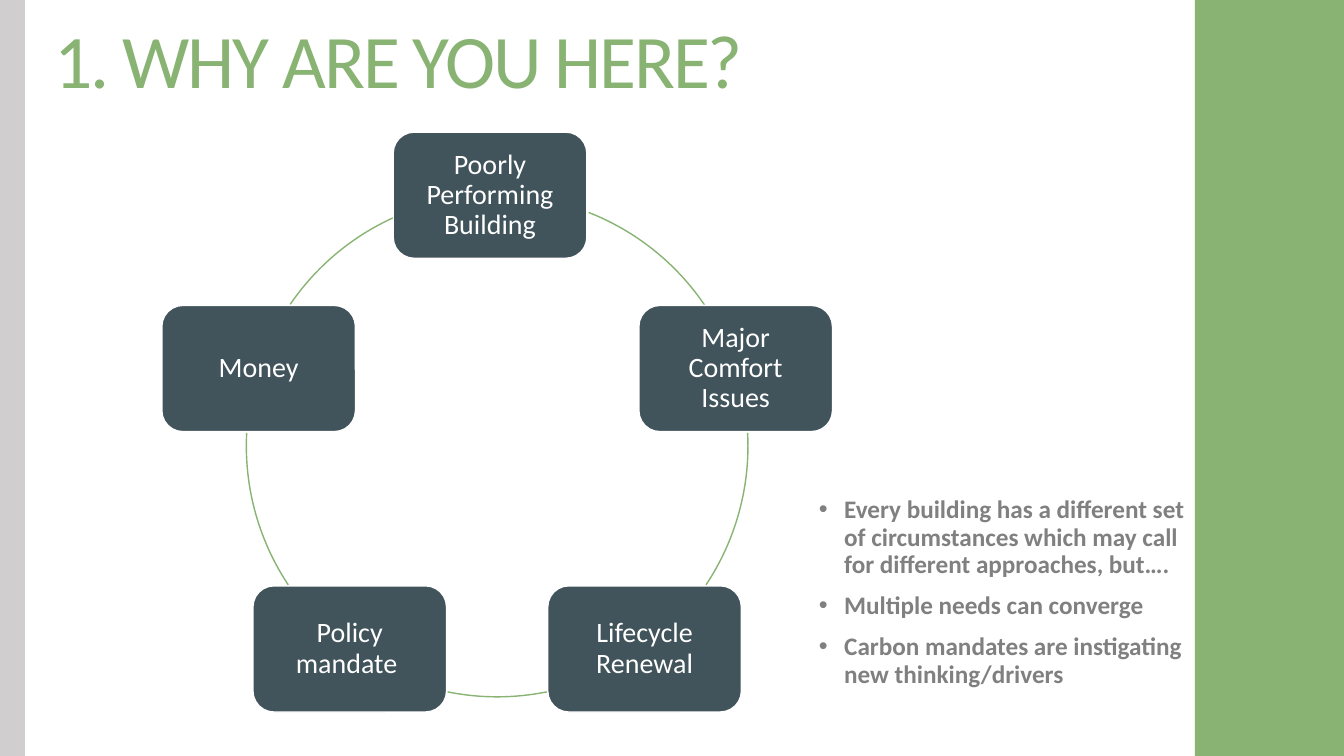
"""Builds a slide with a cycle of five reasons and a short list of remarks."""
from math import cos, radians, sin

from pptx import Presentation
from pptx.dml.color import RGBColor
from pptx.enum.shapes import MSO_SHAPE as Preset
from pptx.enum.text import MSO_ANCHOR as Anchor, MSO_AUTO_SIZE as AutoSize, PP_ALIGN as Align
from pptx.util import Cm, Pt

HEADING = "1. WHY ARE YOU HERE?"
REMARKS = [
    "Every building has a different set of circumstances which may call "
    "for different approaches, but….",
    "Multiple needs can converge",
    "Carbon mandates are instigating new thinking/drivers",
]
# reason, sideways shift in cm, start and end angle of the arc that follows
REASONS = [
    ("Poorly Performing Building", -0.18, 291.4, 325.8),
    ("Major Comfort Issues", 0, 357, 33.6),
    ("Lifecycle Renewal", 0, 78.6, 101.4),
    ("Policy mandate ", 0, 146.4, 183),
    ("Money", 0, 214.4, 245.4),
]
GREEN, LIGHT_GREY, SLATE, GREY, WHITE = "88B373", "D0CECE", "41535B", "808080", "FFFFFF"
FONT = "Calibri"
SLIDE_W, SLIDE_H = 33.87, 19.05
BARS = [(0, 0.63, LIGHT_GREY), (30.11, SLIDE_W - 30.11, GREEN)]
CENTRE_X, CENTRE_Y, RADIUS = 12.53, 11.24, 6.32
REASON_W, REASON_H = 4.88, 3.18


def colour(fmt, value):
    fmt.rgb = RGBColor.from_string(value)


def place(part, left, top, width, height):
    part.left, part.top, part.width, part.height = map(Cm, (left, top, width, height))


def write(paragraph, words, size, ink, bold=False):
    paragraph.line_spacing = 0.9
    run = paragraph.add_run()
    run.text = words
    run.font.name, run.font.size, run.font.bold = FONT, Pt(size), bold
    colour(run.font.color, ink)
    return run


def draw(slide, preset, box, fill=None, line=None):
    part = slide.shapes.add_shape(preset, *map(Cm, box))
    part.shadow.inherit = False
    if fill:
        part.fill.solid()
        colour(part.fill.fore_color, fill)
    else:
        part.fill.background()
    if line:
        colour(part.line.color, line)
        part.line.width = Pt(1)
    else:
        part.line.fill.background()
    return part


def add_heading(slide):
    heading = slide.shapes.title
    place(heading, 1.12, 0.46, 18.97, 2.34)
    frame = heading.text_frame
    frame.auto_size, frame.vertical_anchor = AutoSize.NONE, Anchor.TOP
    frame.paragraphs[0].alignment = Align.LEFT
    run = write(frame.paragraphs[0], HEADING, 54, GREEN)
    run.font._element.set("spc", "-150")


def add_remarks(slide):
    remarks = slide.placeholders[1]
    place(remarks, 20.38, 12.4, 9.85, 5.76)
    frame = remarks.text_frame
    frame.auto_size, frame.vertical_anchor = AutoSize.NONE, Anchor.TOP
    for i, remark in enumerate(REMARKS):
        paragraph = frame.add_paragraph() if i else frame.paragraphs[0]
        paragraph.space_before = Pt(10 if i else 0)
        indents = paragraph._p.get_or_add_pPr()
        indents.set("marL", str(Cm(0.64)))
        indents.set("indent", str(-Cm(0.64)))
        write(paragraph, remark, 18, GREY, bold=True)


def add_cycle(slide):
    ring = (CENTRE_X - RADIUS, CENTRE_Y - RADIUS, 2 * RADIUS, 2 * RADIUS)
    for i, (reason, shift, start, end) in enumerate(REASONS):
        angle = radians(360 / len(REASONS) * i - 90)
        left = CENTRE_X + RADIUS * cos(angle) + shift - REASON_W / 2
        top = CENTRE_Y + RADIUS * sin(angle) - REASON_H / 2
        card = draw(slide, Preset.ROUNDED_RECTANGLE, (left, top, REASON_W, REASON_H), SLATE, WHITE)
        frame = card.text_frame
        frame.word_wrap, frame.vertical_anchor = True, Anchor.MIDDLE
        frame.margin_left = frame.margin_right = Cm(0.36)
        frame.margin_top = frame.margin_bottom = Cm(0.36)
        frame.paragraphs[0].alignment = Align.CENTER
        write(frame.paragraphs[0], reason, 20, WHITE)

        arc = draw(slide, Preset.ARC, ring, line=GREEN)
        arc.adjustments[0], arc.adjustments[1] = start * 0.6, end * 0.6


def main():
    deck = Presentation()
    deck.slide_width, deck.slide_height = Cm(SLIDE_W), Cm(SLIDE_H)
    slide = deck.slides.add_slide(deck.slide_layouts[1])
    add_heading(slide)
    for left, width, fill in BARS:
        draw(slide, Preset.RECTANGLE, (left, 0, width, SLIDE_H), fill)
    add_remarks(slide)
    add_cycle(slide)
    deck.save("out.pptx")


if __name__ == "__main__":
    main()
